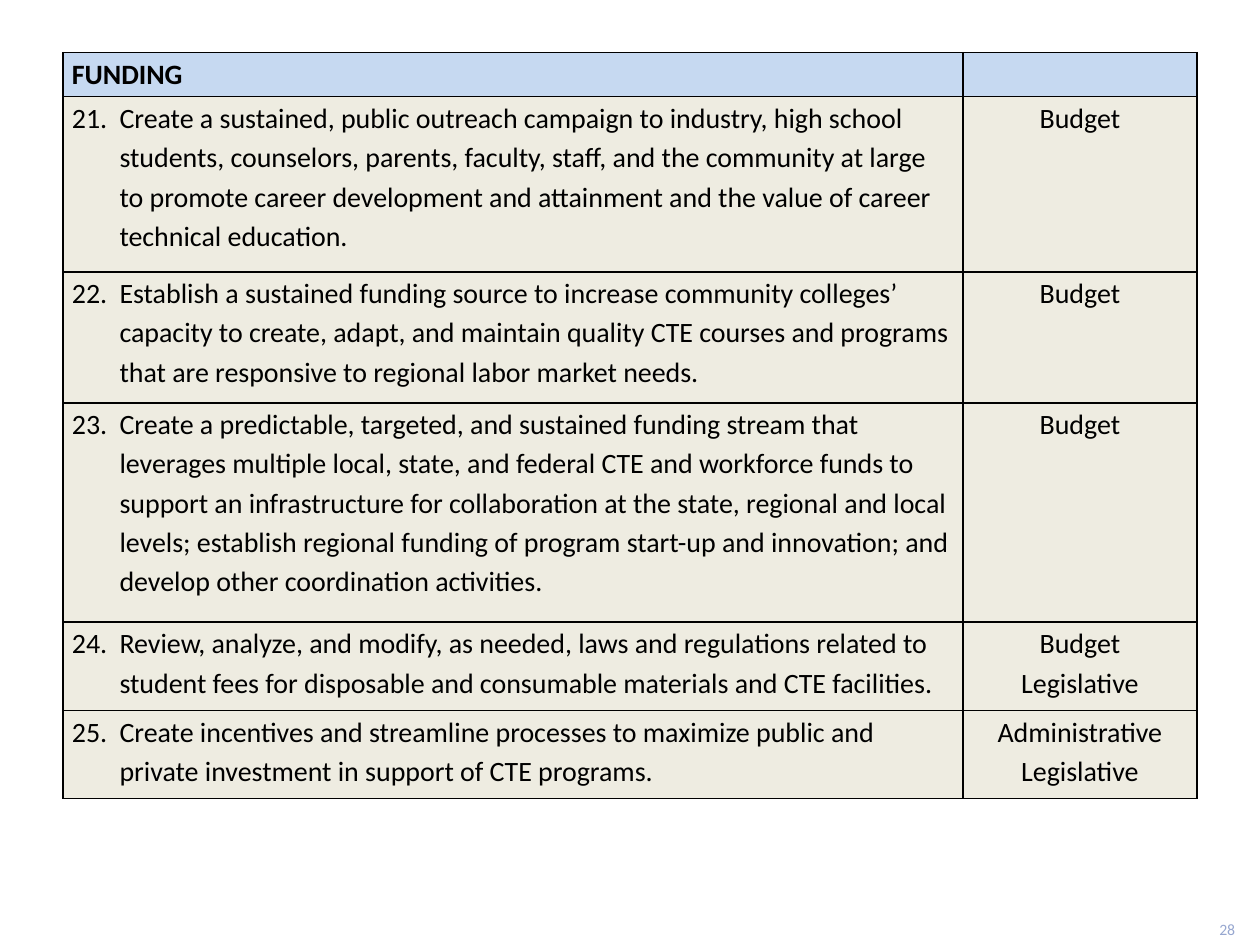
import pptx
import pptx.util
import pptx.dml.color
import pptx.enum.text
import pptx.oxml
import pptx.oxml.ns
from lxml import etree

Cm = pptx.util.Cm
Pt = pptx.util.Pt
RGBColor = pptx.dml.color.RGBColor
ALIGN = pptx.enum.text.PP_ALIGN
ANCHOR = pptx.enum.text.MSO_ANCHOR

BLACK = RGBColor(0x00, 0x00, 0x00)
HEADER_BLUE = RGBColor(0xC6, 0xD9, 0xF1)
BODY_CREAM = RGBColor(0xEE, 0xEC, 0xE1)
NUMBER_BLUE = RGBColor(0x97, 0xA7, 0xD0)
FONT = "Calibri"

FIRST_NUMBER = 21
COLUMN_WIDTHS = [18.14, 4.72]
HEADER_HEIGHT = 0.89
# Recommendation, kinds of action, row height in cm
RECOMMENDATIONS = [
    ("Create a sustained, public outreach campaign to industry, high school "
     "students, counselors, parents, faculty, staff, and the community at large "
     "to promote career development and attainment and the value of career "
     "technical education.", ["Budget"], 3.53),
    ("Establish a sustained funding source to increase community colleges’ "
     "capacity to create, adapt, and maintain quality CTE courses and programs "
     "that are responsive to regional labor market needs.", ["Budget"], 2.64),
    ("Create a predictable, targeted, and sustained funding stream that "
     "leverages multiple local, state, and federal CTE and workforce funds to "
     "support an infrastructure for collaboration at the state, regional and "
     "local levels; establish regional funding of program start-up and "
     "innovation; and develop other coordination activities.", ["Budget"], 4.42),
    ("Review, analyze, and modify, as needed, laws and regulations related to "
     "student fees for disposable and consumable materials and CTE facilities.",
     ["Budget", "Legislative"], 1.78),
    ("Create incentives and streamline processes to maximize public and "
     "private investment in support of CTE programs.",
     ["Administrative", "Legislative"], 1.78),
]


def add_element(parent, tag, **attributes):
    element = etree.SubElement(parent, pptx.oxml.ns.qn(tag))
    for name, value in attributes.items():
        element.set(name, str(value))
    return element


def style_run(span, size, color, bold=False):
    span.font.name = FONT
    span.font.size = Pt(size)
    span.font.bold = bold
    span.font.color.rgb = color


def style_cell(cell, color):
    """Set the margins, black borders and fill of a cell."""
    cell.margin_left = cell.margin_right = Cm(0.18)
    cell.margin_top = cell.margin_bottom = 0
    properties = cell._tc.get_or_add_tcPr()
    for side in ("a:lnL", "a:lnR", "a:lnT", "a:lnB"):
        line = add_element(properties, side, w=Pt(1))
        fill = add_element(line, "a:solidFill")
        add_element(fill, "a:srgbClr", val=BLACK)
    cell.fill.solid()
    cell.fill.fore_color.rgb = color


def write_cell(cell, text, align=ALIGN.LEFT, bold=False, number=None):
    cell.text_frame.text = text
    for para in cell.text_frame.paragraphs:
        para.alignment = align
        para.line_spacing = 1.15
        if number is not None:
            properties = para._p.get_or_add_pPr()
            properties.set("marL", str(Cm(0.96)))
            properties.set("indent", str(-Cm(0.96)))
            add_element(properties, "a:buFont", typeface="+mj-lt")
            add_element(properties, "a:buAutoNum", type="arabicPeriod", startAt=number)
        for span in para.runs:
            style_run(span, 16, BLACK, bold)


def add_funding_table(page, left, top):
    heights = [HEADER_HEIGHT] + [row[2] for row in RECOMMENDATIONS]
    table = page.shapes.add_table(
        len(heights), len(COLUMN_WIDTHS), Cm(left), Cm(top),
        Cm(sum(COLUMN_WIDTHS)), Cm(sum(heights))).table
    table.first_row = table.horz_banding = False
    for column, width in zip(table.columns, COLUMN_WIDTHS):
        column.width = Cm(width)
    for index, height in enumerate(heights):
        table.rows[index].height = Cm(height)
        for cell in table.rows[index].cells:
            style_cell(cell, BODY_CREAM if index else HEADER_BLUE)

    # Header, then the numbered recommendations
    write_cell(table.cell(0, 0), "FUNDING", bold=True)
    for index, (text, actions, _) in enumerate(RECOMMENDATIONS):
        write_cell(table.cell(index + 1, 0), text, number=FIRST_NUMBER + index)
        write_cell(table.cell(index + 1, 1), "\n".join(actions), ALIGN.CENTER)


def add_page_number(page, left, top, width, height):
    box = page.shapes.add_textbox(Cm(left), Cm(top), Cm(width), Cm(height))
    frame = box.text_frame
    frame.word_wrap = True
    frame.vertical_anchor = ANCHOR.MIDDLE
    frame.text = "28"
    style_run(frame.paragraphs[0].runs[0], 9, NUMBER_BLUE)


def main():
    deck = pptx.Presentation()
    deck.slide_width, deck.slide_height = Cm(25.4), Cm(19.05)
    page = deck.slides.add_slide(deck.slide_layouts[6])
    add_page_number(page, 24.33, 18.42, 1.07, 0.63)
    add_funding_table(page, 1.27, 1.06)
    deck.save("out.pptx")


if __name__ == "__main__":
    main()
